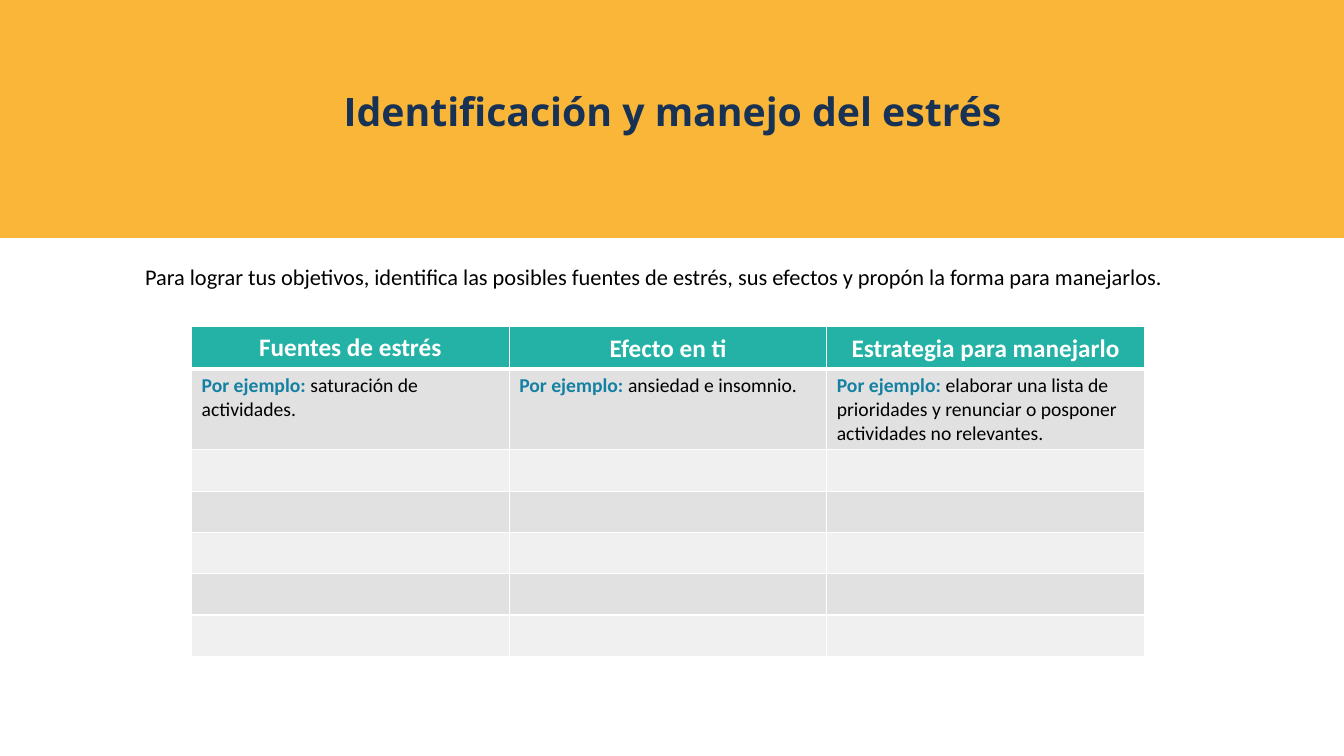
"""Build a slide with a worksheet for identifying and managing stress."""
from dataclasses import dataclass

from lxml.etree import SubElement
from pptx import Presentation
from pptx.dml.color import RGBColor
from pptx.enum.shapes import MSO_SHAPE
from pptx.enum.text import MSO_ANCHOR, PP_ALIGN
from pptx.oxml.ns import qn
from pptx.slide import Slide
from pptx.table import _Cell
from pptx.text.text import _Run
from pptx.util import Inches, Pt

AMBER = RGBColor(0xFA, 0xB6, 0x38)
NAVY = RGBColor(0x17, 0x32, 0x54)
TEAL = RGBColor(0x24, 0xB2, 0xA6)
BLUE = RGBColor(0x14, 0x80, 0xA2)
BLACK = RGBColor(0x00, 0x00, 0x00)
WHITE = RGBColor(0xFF, 0xFF, 0xFF)
DARK_BAND = RGBColor(0xE1, 0xE1, 0xE1)
LIGHT_BAND = RGBColor(0xF0, 0xF0, 0xF0)

ROW_COUNT = 7
ROW_HEIGHT = 0.41
COLUMN_WIDTH = 3.15
EXAMPLE_LABEL = "Por ejemplo: "


@dataclass(frozen=True)
class TextStyle:
    size: int
    color: RGBColor
    bold: bool = False
    font: str = "Calibri"


@dataclass(frozen=True)
class Caption:
    text: str
    left: float
    top: float
    width: float
    height: float
    style: TextStyle
    align: PP_ALIGN = PP_ALIGN.LEFT
    anchor: MSO_ANCHOR = MSO_ANCHOR.TOP
    line_spacing: float = 1.0


@dataclass(frozen=True)
class Topic:
    heading: str
    example: str
    anchor: MSO_ANCHOR = MSO_ANCHOR.TOP
    line_spacing: float = 1.07


HEADING_STYLE = TextStyle(18, WHITE, bold=True)
LABEL_STYLE = TextStyle(14, BLUE, bold=True)
EXAMPLE_STYLE = TextStyle(14, BLACK)

CAPTIONS = [
    Caption("Identificación y manejo del estrés", 0.92, 0.4, 11.5, 1.45,
            TextStyle(28, NAVY, bold=True, font="Open Sans"),
            PP_ALIGN.CENTER, MSO_ANCHOR.MIDDLE, 0.9),
    Caption("Para lograr tus objetivos, identifica las posibles fuentes de estrés, "
            "sus efectos y propón la forma para manejarlos.",
            1.34, 2.56, 10.65, 0.67, TextStyle(16, BLACK)),
]

TOPICS = [
    Topic("Fuentes de estrés", "saturación de actividades.", MSO_ANCHOR.MIDDLE, 1.0),
    Topic("Efecto en ti", "ansiedad e insomnio."),
    Topic("Estrategia para manejarlo",
          "elaborar una lista de prioridades y renunciar o posponer "
          "actividades no relevantes."),
]


def format_run(run: _Run, style: TextStyle) -> None:
    run.font.name = style.font
    run.font.size = Pt(style.size)
    run.font.bold = style.bold
    run.font.color.rgb = style.color


def add_banner(slide: Slide) -> None:
    banner = slide.shapes.add_shape(
        MSO_SHAPE.RECTANGLE, 0, 0, Inches(13.33), Inches(2.36))
    banner.shadow.inherit = False
    banner.fill.solid()
    banner.fill.fore_color.rgb = AMBER
    banner.line.fill.background()


def add_caption(slide: Slide, caption: Caption) -> None:
    frame = slide.shapes.add_textbox(
        Inches(caption.left), Inches(caption.top),
        Inches(caption.width), Inches(caption.height)).text_frame
    frame.word_wrap = True
    frame.vertical_anchor = caption.anchor
    frame.text = caption.text
    paragraph = frame.paragraphs[0]
    paragraph.alignment = caption.align
    paragraph.line_spacing = caption.line_spacing
    format_run(paragraph.runs[0], caption.style)


def paint_cell(cell: _Cell, fill: RGBColor, bottom_width: int, top_width: int) -> None:
    properties = cell._tc.get_or_add_tcPr()
    for side, width in (("L", 1), ("R", 1), ("T", top_width), ("B", bottom_width)):
        border = SubElement(properties, qn(f"a:ln{side}"), w=str(Pt(width)))
        border_fill = SubElement(border, qn("a:solidFill"))
        SubElement(border_fill, qn("a:srgbClr"), val=str(WHITE))
    cell.fill.solid()
    cell.fill.fore_color.rgb = fill


def write_topic(heading_cell: _Cell, example_cell: _Cell, topic: Topic) -> None:
    heading_cell.vertical_anchor = topic.anchor
    heading = heading_cell.text_frame.paragraphs[0]
    heading.text = topic.heading
    heading.alignment = PP_ALIGN.CENTER
    heading.line_spacing = topic.line_spacing
    format_run(heading.runs[0], HEADING_STYLE)

    example = example_cell.text_frame.paragraphs[0]
    example.text = EXAMPLE_LABEL
    format_run(example.runs[0], LABEL_STYLE)
    explanation = example.add_run()
    explanation.text = topic.example
    format_run(explanation, EXAMPLE_STYLE)


def add_worksheet(slide: Slide, topics: list[Topic]) -> None:
    worksheet = slide.shapes.add_table(
        ROW_COUNT, len(topics), Inches(1.9), Inches(3.24),
        Inches(COLUMN_WIDTH * len(topics)), Inches(ROW_HEIGHT * ROW_COUNT)).table
    worksheet.horz_banding = False
    for row in worksheet.rows:
        row.height = Inches(ROW_HEIGHT)
    for column, topic in enumerate(topics):
        worksheet.columns[column].width = Inches(COLUMN_WIDTH)
        for row in range(ROW_COUNT):
            band = DARK_BAND if row % 2 else LIGHT_BAND
            paint_cell(worksheet.cell(row, column), TEAL if row == 0 else band,
                       bottom_width=3 if row == 0 else 1,
                       top_width=3 if row == 1 else 1)
        write_topic(worksheet.cell(0, column), worksheet.cell(1, column), topic)


def main() -> None:
    presentation = Presentation()
    presentation.slide_width = Inches(13.33)
    presentation.slide_height = Inches(7.5)
    slide = presentation.slides.add_slide(presentation.slide_layouts[6])
    add_banner(slide)
    for caption in CAPTIONS:
        add_caption(slide, caption)
    add_worksheet(slide, TOPICS)
    presentation.save("out.pptx")


if __name__ == "__main__":
    main()
